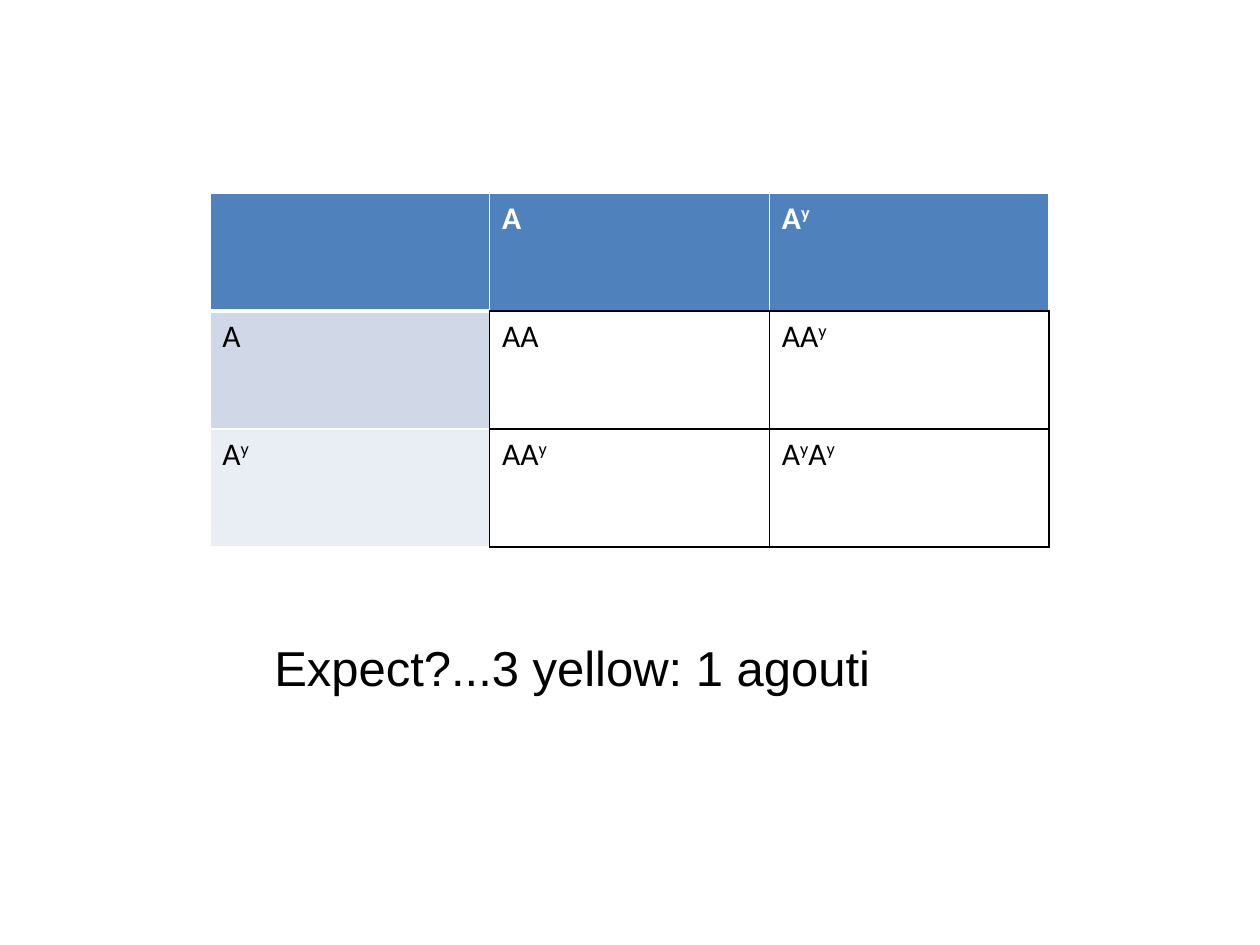
from lxml.etree import SubElement as Sub
from pptx import Presentation
from pptx.dml.color import RGBColor
from pptx.enum.text import MSO_AUTO_SIZE as AutoSize
from pptx.oxml.ns import qn
from pptx.util import Cm, Pt

# Content: each cell is a list of runs; SUP is set as superscript
SUP = "y"
PUNNETT = [
    [[], ["A"], ["A", SUP]],
    [["A"], ["AA"], ["AA", SUP]],
    [["A", SUP], ["AA", SUP], ["A", SUP, "A", SUP]],
]
QUESTION = "Expect?...3 yellow: 1 agouti"

WHITE, BLACK, HEADER = "FFFFFF", "000000", "4F81BD"
SIDE_FILLS = {1: "D0D8E8", 2: "E9EDF4"}
LEFT, TOP, COL_W, ROW_H = 4.23, 3.89, 5.64, 2.38


def rgb(value):
    return RGBColor.from_string(value)


def add_run(p, text, font, size, color, bold=False):
    r = p.add_run()
    r.text = text
    r.font.name, r.font.size, r.font.bold = font, Pt(size), bold
    r.font.color.rgb = rgb(color)
    return r


def add_border(cell, side, color, width):
    ln = Sub(cell._tc.get_or_add_tcPr(), qn(f"a:ln{side}"), w=str(Pt(width)))
    Sub(Sub(ln, qn("a:solidFill")), qn("a:srgbClr"), val=color)


def cell_borders(row, col):
    """Black around the offspring cells, white around the parent cells."""
    if row and col:
        return {side: (BLACK, 1) for side in "LRTB"}
    borders = {side: (WHITE, 1) for side in "LRTB"}
    if row:
        borders["R"] = (BLACK, 1)
    elif col:
        borders["B"] = (BLACK, 1)
    if col == 0 and row < 2:
        borders["T" if row else "B"] = (WHITE, 3)
    return borders


prs = Presentation()
prs.slide_width, prs.slide_height = Cm(25.4), Cm(19.05)
s = prs.slides.add_slide(prs.slide_layouts[6])

# Punnett square
rows, cols = len(PUNNETT), len(PUNNETT[0])
table = s.shapes.add_table(rows, cols, Cm(LEFT), Cm(TOP),
                           Cm(COL_W * cols), Cm(ROW_H * rows)).table
for column in table.columns:
    column.width = Cm(COL_W)
for i, row in enumerate(PUNNETT):
    table.rows[i].height = Cm(ROW_H)
    for j, runs in enumerate(row):
        cell = table.cell(i, j)
        for side, (color, width) in cell_borders(i, j).items():
            add_border(cell, side, color, width)
        fill = HEADER if i == 0 else WHITE if j else SIDE_FILLS[i]
        cell.fill.solid()
        cell.fill.fore_color.rgb = rgb(fill)
        p = cell.text_frame.paragraphs[0]
        for text in runs:
            r = add_run(p, text, "Calibri", 18, BLACK if i else WHITE, i == 0)
            if text == SUP:
                r.font._element.set("baseline", "30000")

# Expected ratio
tf = s.shapes.add_textbox(Cm(5.28), Cm(12.73), Cm(14.4), Cm(1.45)).text_frame
tf.word_wrap = True
tf.auto_size = AutoSize.SHAPE_TO_FIT_TEXT
add_run(tf.paragraphs[0], QUESTION, "Arial", 28, BLACK)

prs.save("out.pptx")
